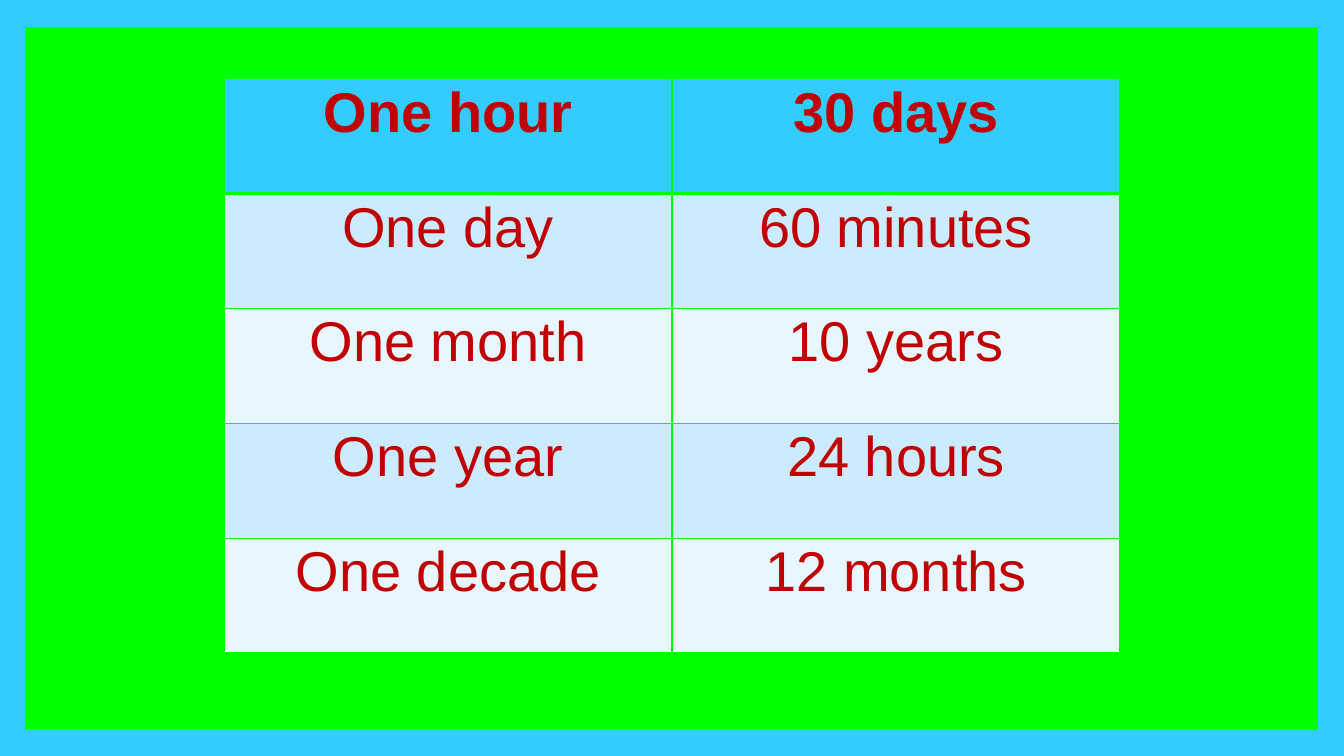
from lxml import etree
from pptx import Presentation
from pptx import util as u
from pptx.dml.color import RGBColor
from pptx.enum import shapes, text
from pptx.oxml import ns

SKY = RGBColor(0x33, 0xCC, 0xFF)
GREEN = RGBColor(0x00, 0xFF, 0x00)
RED = RGBColor(0xC0, 0x00, 0x00)
PALE = RGBColor(0xCD, 0xEB, 0xFF)
ICE = RGBColor(0xE8, 0xF6, 0xFF)

WIDE, HIGH = 13.33, 7.5
PAIRS = [
    ("One hour", "30 days"),
    ("One day", "60 minutes"),
    ("One month", "10 years"),
    ("One year", "24 hours"),
    ("One decade", "12 months"),
]
FONT = {"name": "Arial", "size": u.Pt(40)}
CELL = {"margin_left": 0, "margin_right": 0, "margin_bottom": 0,
        "margin_top": u.Inches(0.03)}


def style(item, values):
    """Set each named attribute of an item."""
    for name, value in values.items():
        setattr(item, name, value)


def panel(slide, box, color):
    """Fill a box with one flat colour."""
    rect = slide.shapes.add_shape(
        shapes.MSO_SHAPE.RECTANGLE, *map(u.Inches, box))
    rect.shadow.inherit = False
    rect.fill.solid()
    rect.fill.fore_color.rgb = color
    rect.line.fill.background()


def edge(cell, side, width):
    """Draw one green border of a cell, ahead of its fill."""
    line = etree.Element(ns.qn("a:" + side), w=str(u.Pt(width)))
    fill = etree.SubElement(line, ns.qn("a:solidFill"))
    etree.SubElement(fill, ns.qn("a:srgbClr"), val=str(GREEN))
    props = cell._tc.get_or_add_tcPr()
    props.insert(len(props.findall("*")) - 1, line)


def fill_cell(cell, words, row):
    """Write and format one cell according to its row."""
    style(cell, CELL)
    cell.fill.solid()
    cell.fill.fore_color.rgb = (PALE if row % 2 else ICE) if row else SKY
    widths = {"lnL": 1, "lnR": 1, "lnT": 3 if row == 1 else 1,
              "lnB": 1 if row else 3}
    for side, width in widths.items():
        edge(cell, side, width)
    para = cell.text_frame.paragraphs[0]
    para.alignment = text.PP_ALIGN.CENTER
    run = para.add_run()
    run.text = words
    style(run.font, {**FONT, "bold": row == 0})
    run.font.color.rgb = RED


def match_table(slide, box):
    """Place the time table in a box with equal rows and columns."""
    left, top, width, height = map(u.Inches, box)
    rows, cols = len(PAIRS), len(PAIRS[0])
    grid = slide.shapes.add_table(rows, cols, left, top, width, height).table
    for col in grid.columns:
        col.width = width // cols
    for r, pair in enumerate(PAIRS):
        grid.rows[r].height = height // rows
        for c, words in enumerate(pair):
            fill_cell(grid.cell(r, c), words, r)


def time_slide(deck):
    """Build the framed slide with its table."""
    slide = deck.slides.add_slide(deck.slide_layouts[6])
    panel(slide, (0, 0, WIDE, HIGH), SKY)
    panel(slide, (0.25, 0.27, 12.82, 6.97), GREEN)
    match_table(slide, (WIDE / 6, 0.78, WIDE * 2 / 3, 5.7))


def main():
    """Create and save the deck."""
    deck = Presentation()
    style(deck, {"slide_width": u.Inches(WIDE), "slide_height": u.Inches(HIGH)})
    time_slide(deck)
    deck.save("out.pptx")


if __name__ == "__main__":
    main()
